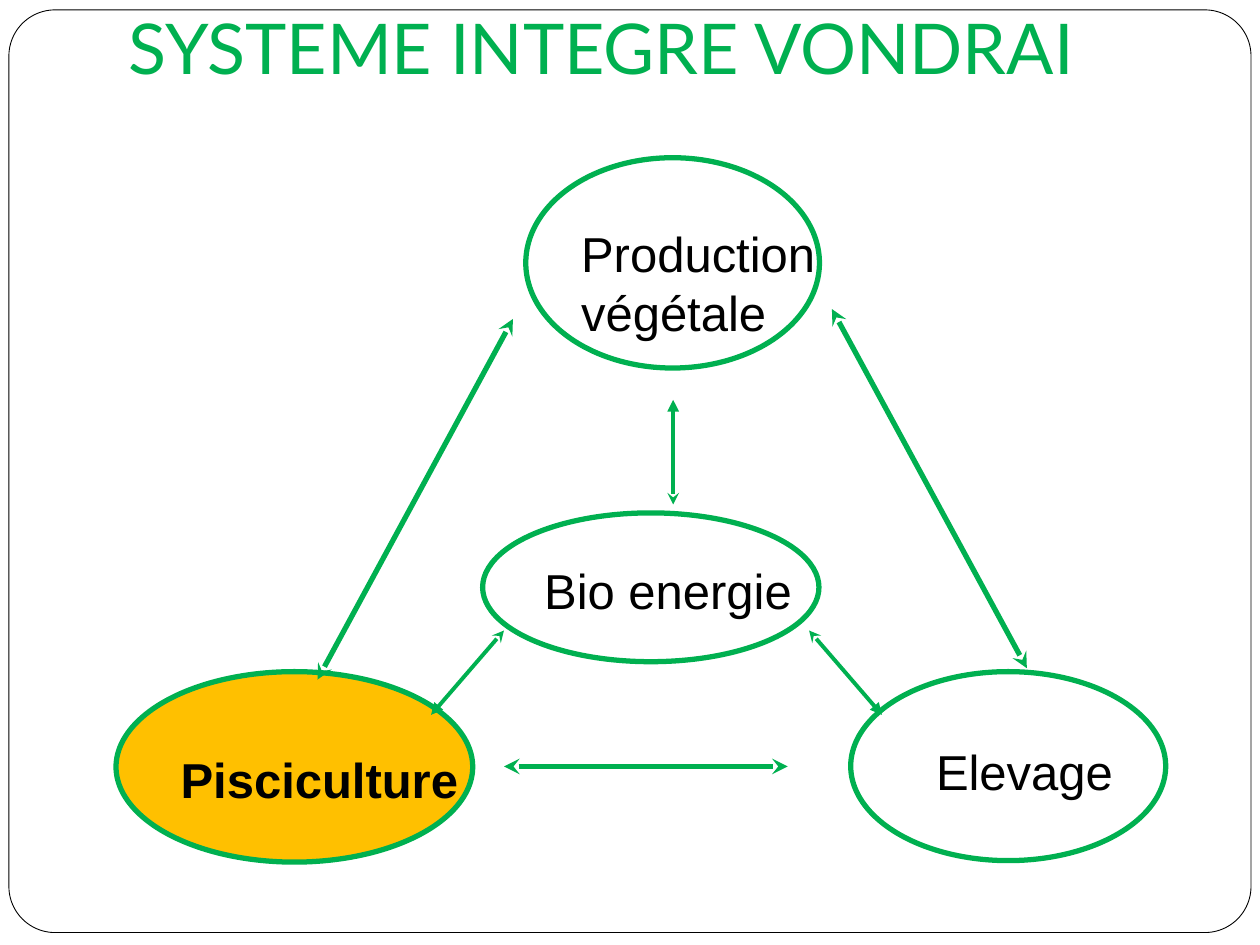
from lxml import etree
from pptx import Presentation
from pptx.dml.color import RGBColor
from pptx.enum.shapes import MSO_CONNECTOR, MSO_SHAPE
from pptx.enum.text import MSO_ANCHOR, PP_ALIGN
from pptx.oxml.ns import qn
from pptx.util import Cm, Pt

OVAL, ROUND = MSO_SHAPE.OVAL, MSO_SHAPE.ROUNDED_RECTANGLE
LINE = MSO_CONNECTOR.STRAIGHT
LEFT, TOP, MID = PP_ALIGN.LEFT, MSO_ANCHOR.TOP, MSO_ANCHOR.MIDDLE
GREEN, GOLD, BLACK, WHITE = "00B050", "FFC000", "000000", "FFFFFF"
PAD, EDGE = 0.25, 0.13

# label, box within the diagram, fill, bold, extra space above the label
NODES = [
    ("Production\nvégétale", (8.26, 0, 5.92, 4.24), None, False, 0.79),
    ("Pisciculture", (0, 10.36, 7.19, 3.84), GOLD, True, 0.5),
    ("", (14.81, 10.36, 6.35, 3.81), None, False, 0),
    ("Bio energie", (7.39, 7.16, 6.78, 3), None, False, 0.1),
]
# start, end, width, arrowhead at start, arrowhead at end
LINKS = [
    ((8, 3.25), (4.06, 10.52), 3, "stealth", "stealth"),
    ((11.23, 4.88), (11.23, 6.99), 2.25, "triangle", "stealth"),
    ((7.82, 9.53), (6.35, 11.23), 2.25, "stealth", "triangle"),
    ((13.97, 9.53), (15.44, 11.23), 2.25, "stealth", "triangle"),
    ((14.43, 3.05), (18.36, 10.29), 3, "stealth", "stealth"),
    ((7.82, 12.27), (13.54, 12.27), 3, "stealth", "stealth"),
]


def rgb(code):
    return RGBColor.from_string(code)


def write(shape, text, size=28, font="Arial", color=BLACK, bold=False,
          anchor=MID, top=EDGE, wrap=False):
    frame = shape.text_frame
    frame.word_wrap = wrap
    frame.vertical_anchor = anchor
    frame.margin_left = frame.margin_right = Cm(PAD)
    frame.margin_top, frame.margin_bottom = Cm(top), Cm(EDGE)
    for i, line in enumerate(text.split("\n")):
        para = frame.paragraphs[0] if i == 0 else frame.add_paragraph()
        para.alignment = LEFT
        run = para.add_run()
        run.text = line
        run.font.name, run.font.size, run.font.bold = font, Pt(size), bold
        run.font.color.rgb = rgb(color)


def draw(slide, kind, box, fill, line, width):
    shape = slide.shapes.add_shape(kind, *map(Cm, box))
    shape.shadow.inherit = False
    if fill:
        shape.fill.solid()
        shape.fill.fore_color.rgb = rgb(fill)
    else:
        shape.fill.background()
    shape.line.color.rgb = rgb(line)
    shape.line.width = Pt(width)
    return shape


def label(slide, box, text, **style):
    write(slide.shapes.add_textbox(*map(Cm, box)), text, **style)


def link(slide, start, end, width, head, tail):
    line = slide.shapes.add_connector(LINE, *map(Cm, start + end))
    line.line.color.rgb = rgb(GREEN)
    line.line.width = Pt(width)
    for tag, mark in (("a:headEnd", head), ("a:tailEnd", tail)):
        etree.SubElement(line.line._get_or_add_ln(), qn(tag), type=mark)
    etree.SubElement(line._element.spPr, qn("a:effectLst"))


def border(slide, box):
    frame = draw(slide, ROUND, box, WHITE, BLACK, 0.5)
    frame.adjustments[0] = 0.05


def title(slide, box):
    label(slide, box, "SYSTEME INTEGRE VONDRAI", size=40, font="Lato",
          color=GREEN, anchor=TOP, top=0, wrap=True)


def diagram(slide, box):
    x, y = box[:2]
    for text, (left, top, wide, high), fill, bold, drop in NODES:
        oval = draw(slide, OVAL, (x + left, y + top, wide, high),
                    fill, GREEN, 3)
        if text:
            write(oval, text, bold=bold, top=EDGE + drop)
    for (x1, y1), (x2, y2), *style in LINKS:
        link(slide, (x + x1, y + y1), (x + x2, y + y2), *style)
    label(slide, (x + 16.28, y + 11.63, 4.11, 1.45), "Elevage", anchor=TOP)


def main():
    deck = Presentation()
    deck.slide_width, deck.slide_height = Cm(25.4), Cm(19.05)
    slide = deck.slides.add_slide(deck.slide_layouts[6])
    border(slide, (0.18, 0.2, 25.04, 18.6))
    diagram(slide, (2.34, 3.18, 21.16, 14.2))
    title(slide, (2.34, 0.1, 23.06, 1.7))
    deck.save("out.pptx")


if __name__ == "__main__":
    main()
